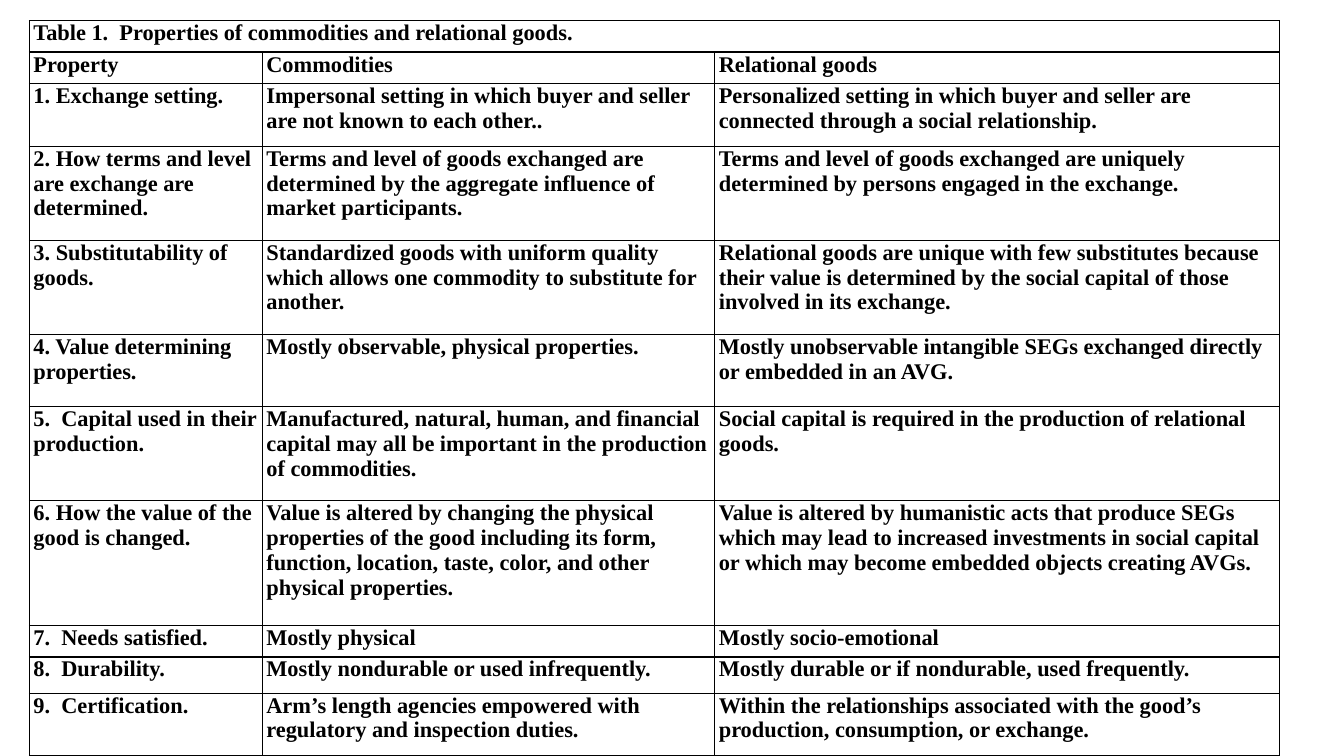
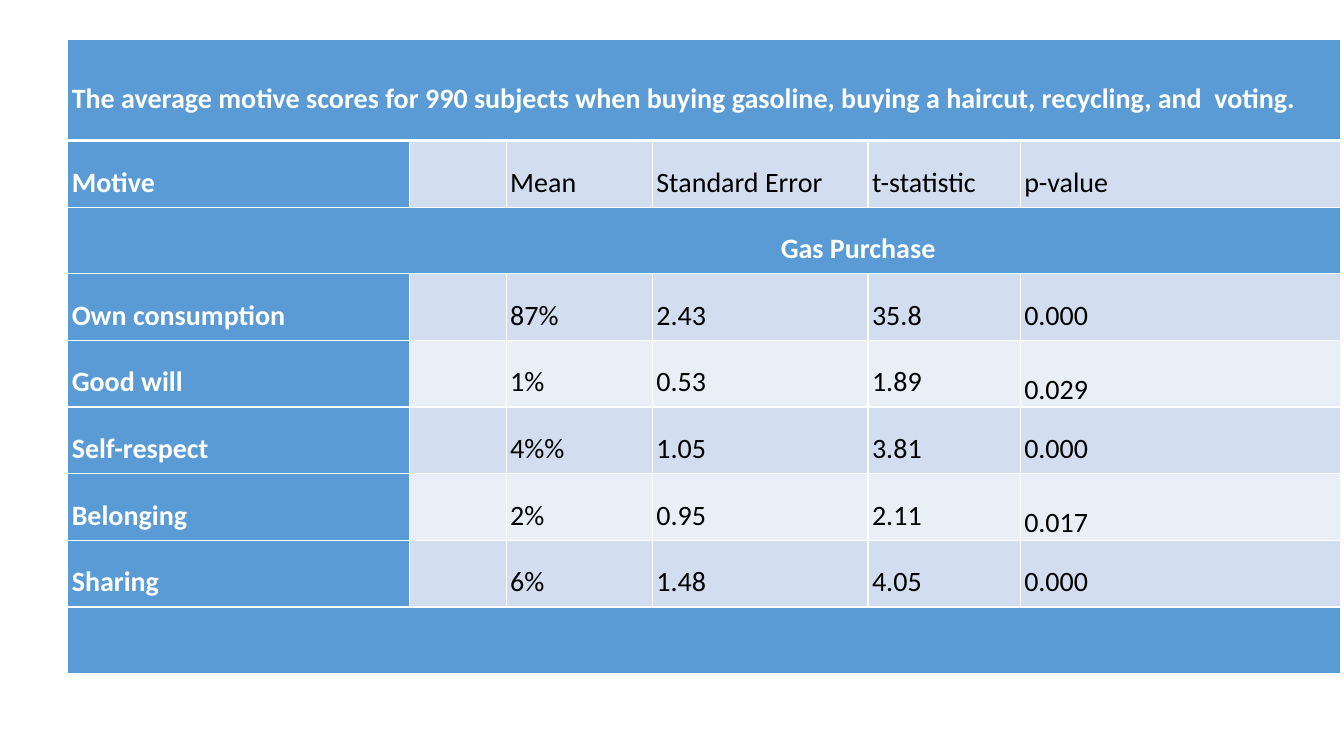
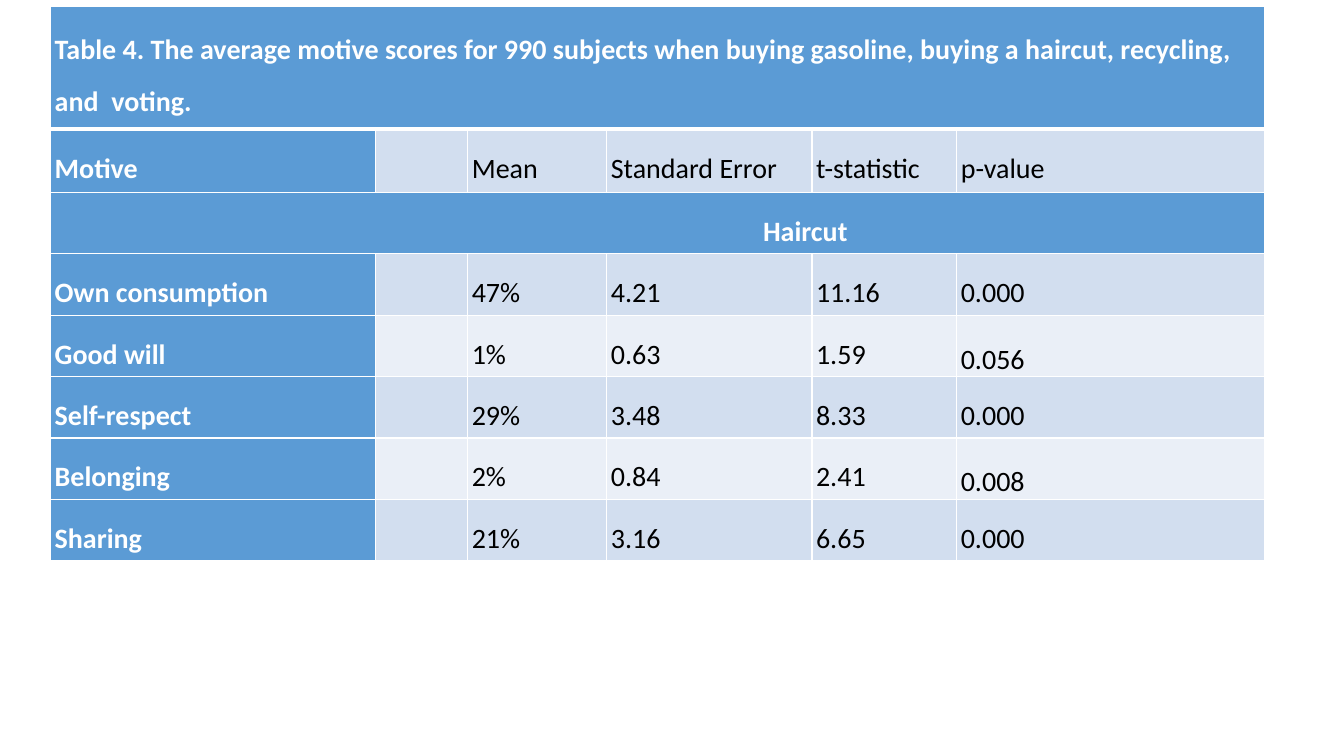
from pptx import Presentation
from pptx.dml.color import RGBColor
from pptx.enum import text
from pptx.oxml import parse_xml
from pptx.oxml.ns import nsdecls
from pptx.util import Pt

COLORS = {"ink": "000000", "paper": "FFFFFF", "blue": "5B9BD5",
          "band": "D2DEEF", "pale": "EAEFF7"}
INSET = 2.9

GOODS = [
    ("Table 1.  Properties of commodities and relational goods.", "", ""),
    ("Property", "Commodities", "Relational goods"),
    ("1. Exchange setting.",
     "Impersonal setting in which buyer and seller are not known to each other..",
     "Personalized setting in which buyer and seller are connected through a social relationship."),
    ("2. How terms and level are exchange are determined.",
     "Terms and level of goods exchanged are determined by the aggregate influence of market participants.",
     "Terms and level of goods exchanged are uniquely determined by persons engaged in the exchange."),
    ("3. Substitutability of goods.",
     "Standardized goods with uniform quality which allows one commodity to substitute for another.",
     "Relational goods are unique with few substitutes because their value is determined by the "
     "social capital of those involved in its exchange."),
    ("4. Value determining properties.",
     "Mostly observable, physical properties.",
     "Mostly unobservable intangible SEGs exchanged directly or embedded in an AVG."),
    ("5.  Capital used in their production.",
     "Manufactured, natural, human, and financial capital may all be important in the production of commodities.",
     "Social capital is required in the production of relational goods."),
    ("6. How the value of the good is changed.",
     "Value is altered by changing the physical properties of the good including its form, "
     "function, location, taste, color, and other physical properties.",
     "Value is altered by humanistic acts that produce SEGs which may lead to increased "
     "investments in social capital or which may become embedded objects creating AVGs."),
    ("7.  Needs satisfied.", "Mostly physical", "Mostly socio-emotional"),
    ("8.  Durability.", "Mostly nondurable or used infrequently.",
     "Mostly durable or if nondurable, used frequently."),
    ("9.  Certification.",
     "Arm’s length agencies empowered with regulatory and inspection duties.",
     "Within the relationships associated with the good’s production, consumption, or exchange."),
]
GOODS_COLUMNS = [166.4, 323.2, 403.2]
GOODS_HEIGHTS = [22.4, 22.4, 44.8, 67.2, 67.2, 51.6, 67.2, 89.4, 22.4, 25.8, 44.8]

CAPTION = ("The average motive scores for 990 subjects when buying gasoline, "
           "buying a haircut, recycling, and  voting.")
HEADINGS = ["Motive", "", "Mean", "Standard Error", "t-statistic", "p-value"]
MOTIVES = ["Own consumption", "Good will", "Self-respect", "Belonging", "Sharing"]
SHARES = [3.39, 0.96, 1.45, 2.14, 1.51, 1.45]
SURVEYS = [
    dict(caption=CAPTION, purchase="Gas Purchase", indent=223, left=48.4, top=28.4, width=784.8,
         heights=[72] + [47.6] * 8, closing=True,
         scores=[("87%", "2.43", "35.8", "0.000"), ("1%", "0.53", "1.89", "0.029"),
                 ("4%%", "1.05", "3.81", "0.000"), ("2%", "0.95", "2.11", "0.017"),
                 ("6%", "1.48", "4.05", "0.000")]),
    dict(caption="Table 4. " + CAPTION, purchase="Haircut", indent=214, left=36.2, top=4.4, width=746.6,
         heights=[87.6, 45.4] + [43.9] * 6, closing=False,
         scores=[("47%", "4.21", "11.16", "0.000"), ("1%", "0.63", "1.59", "0.056"),
                 ("29%", "3.48", "8.33", "0.000"), ("2%", "0.84", "2.41", "0.008"),
                 ("21%", "3.16", "6.65", "0.000")]),
]


def rgb(name):
    return RGBColor.from_string(COLORS[name])


def place_table(deck, left, top, widths, heights):
    slide = deck.slides.add_slide(deck.slide_layouts[6])
    grid = slide.shapes.add_table(len(heights), len(widths), Pt(left), Pt(top),
                                  Pt(sum(widths)), Pt(sum(heights))).table
    grid.first_row = grid.horz_banding = False
    for column, width in zip(grid.columns, widths):
        column.width = Pt(width)
    for row, height in zip(grid.rows, heights):
        row.height = Pt(height)
    return grid


def set_borders(cell, color, top=1, bottom=1):
    properties = cell._tc.get_or_add_tcPr()
    for side, width in (("L", 1), ("R", 1), ("T", top), ("B", bottom)):
        properties.append(parse_xml(
            f'<a:ln{side} {nsdecls("a")} w="{Pt(width)}"><a:solidFill>'
            f'<a:srgbClr val="{COLORS[color]}"/></a:solidFill></a:ln{side}>'))


def write(cell, words, font, size, color, bold, spacing=None):
    cell.margin_left = cell.margin_right = Pt(INSET)
    cell.margin_top = cell.margin_bottom = 0
    cell.text_frame.text = words
    paragraph = cell.text_frame.paragraphs[0]
    if spacing:
        paragraph.line_spacing = spacing
    for run in paragraph.runs:
        run.font.name, run.font.size, run.font.bold = font, Pt(size), bold
        run.font.color.rgb = rgb(color)


def add_goods(deck):
    grid = place_table(deck, 21, 14.8, GOODS_COLUMNS, GOODS_HEIGHTS)
    for r, row in enumerate(GOODS):
        for c, words in enumerate(row):
            cell = grid.cell(r, c)
            set_borders(cell, "ink")
            cell.fill.background()
            write(cell, words, "Times New Roman", 16, "ink", True)
    grid.cell(0, 0).merge(grid.cell(0, 2))


def add_survey(deck, survey):
    blank = [""] * 5
    rows = [[survey["caption"]] + blank, HEADINGS, [survey["purchase"]] + blank]
    rows += [[motive, "", *scores] for motive, scores in zip(MOTIVES, survey["scores"])]
    full_rows = [0, 2]
    if survey["closing"]:
        full_rows.append(len(rows))
        rows.append([""] + blank)
    widths = [survey["width"] * share / sum(SHARES) for share in SHARES]
    grid = place_table(deck, survey["left"], survey["top"], widths, survey["heights"])
    for r, row in enumerate(rows):
        for c, words in enumerate(row):
            cell = grid.cell(r, c)
            label = c == 0 or r in full_rows
            shade = "band" if r % 2 else "pale"
            set_borders(cell, "paper", 3 if r == 1 else 1, 3 if r == 0 else 1)
            cell.fill.solid()
            cell.fill.fore_color.rgb = rgb("blue" if label else shade)
            write(cell, words, "Calibri", 20, "paper" if label else "ink", label, 1.5)
            low = shade == "pale" and c == 5 and not label
            cell.vertical_anchor = text.MSO_ANCHOR.BOTTOM if low else text.MSO_ANCHOR.MIDDLE
    for r in full_rows:
        grid.cell(r, 0).merge(grid.cell(r, 5))
    purchase = grid.cell(2, 0)
    purchase.margin_left = Pt(survey["indent"])
    purchase.text_frame.paragraphs[0].alignment = text.PP_ALIGN.CENTER


def main():
    deck = Presentation()
    deck.slide_width, deck.slide_height = Pt(960), Pt(540)
    add_goods(deck)
    for survey in SURVEYS:
        add_survey(deck, survey)
    deck.save("out.pptx")


if __name__ == "__main__":
    main()
